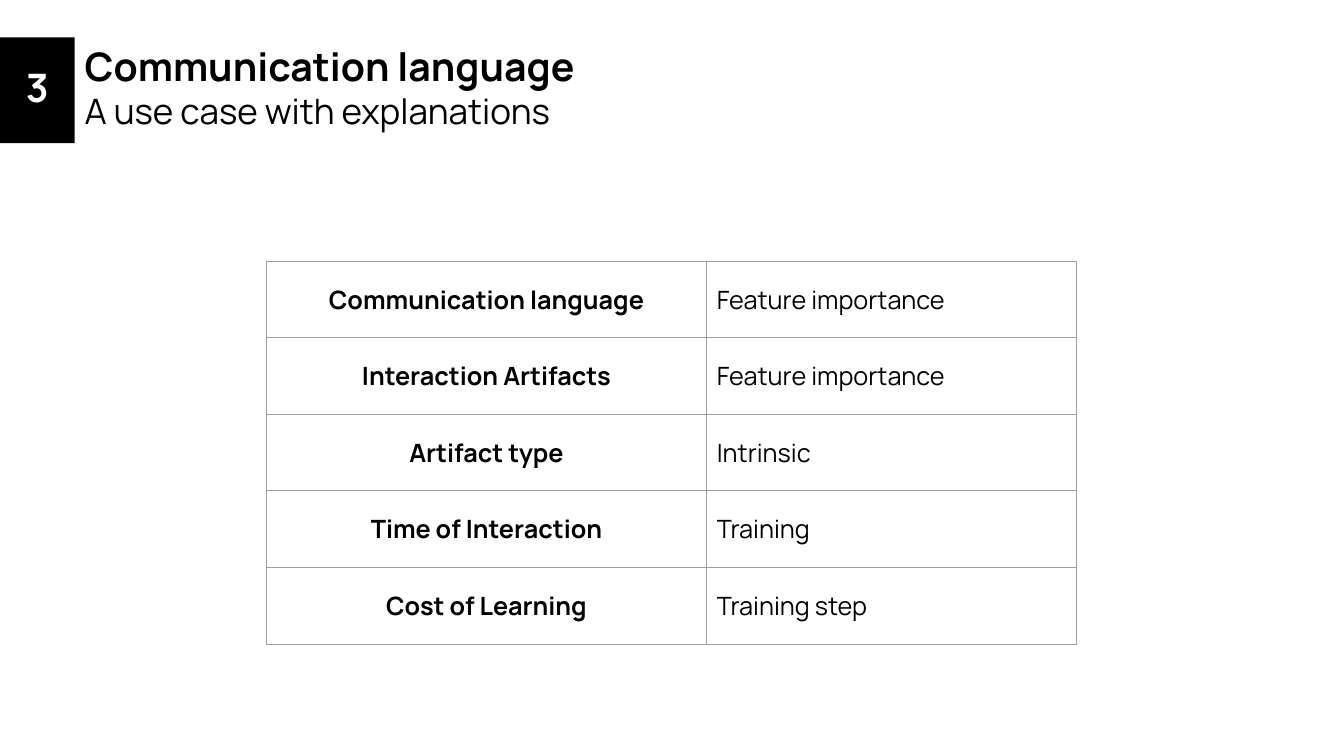
from dataclasses import dataclass

from lxml.etree import SubElement
from pptx import Presentation
from pptx.dml.color import RGBColor
from pptx.enum.shapes import MSO_SHAPE as Shape
from pptx.enum.text import MSO_ANCHOR as Anchor, MSO_AUTO_SIZE as AutoSize, PP_ALIGN as Align
from pptx.oxml.ns import qn
from pptx.util import Inches, Pt

# Content
SECTION_NUMBER = "3"
TITLE = "Communication language"
SUBTITLE = "A use case with explanations"
ROWS = [
    ("Communication language", "Feature importance"),
    ("Interaction Artifacts", "Feature importance"),
    ("Artifact type", "Intrinsic"),
    ("Time of Interaction", "Training"),
    ("Cost of Learning", "Training step"),
]

# Layout in inches
SLIDE_WIDTH, SLIDE_HEIGHT = 13.33, 7.5
HEADER_TOP, TITLE_WIDTH, TITLE_HEIGHT = 0.37, 11.55, 0.99
BADGE_WIDTH, BADGE_HEIGHT = 0.74, 1.05
TABLE_LEFT, TABLE_TOP = 2.64, 2.59
COLUMN_WIDTHS, ROW_HEIGHT = (4.37, 3.67), 0.76
CELL_MARGIN = 0.1


@dataclass(frozen=True)
class Theme:
    font: str = "Manrope"
    ink: str = "000000"
    paper: str = "FFFFFF"
    border: str = "9E9E9E"
    border_width: float = 0.75
    title_size: int = 28
    subtitle_size: int = 25
    table_size: int = 18


THEME = Theme()


def write(paragraph, text, *, size, color=THEME.ink, bold=False, align=Align.LEFT, spacing=None):
    paragraph.alignment = align
    if spacing:
        paragraph.line_spacing = spacing
    run = paragraph.add_run()
    run.text = text
    font = run.font
    font.name, font.size, font.bold = THEME.font, Pt(size), bold
    font.color.rgb = RGBColor.from_string(color)


def add_borders(cell):
    properties = cell._tc.get_or_add_tcPr()
    for side in ("lnL", "lnR", "lnT", "lnB"):
        line = SubElement(properties, qn(f"a:{side}"), w=str(Pt(THEME.border_width)))
        fill = SubElement(line, qn("a:solidFill"))
        SubElement(fill, qn("a:srgbClr"), val=THEME.border)


def add_header(slide):
    # Title and subtitle
    title = slide.shapes.title
    title.left, title.top = Inches(BADGE_WIDTH), Inches(HEADER_TOP)
    title.width, title.height = Inches(TITLE_WIDTH), Inches(TITLE_HEIGHT)
    frame = title.text_frame
    frame.auto_size = AutoSize.NONE
    frame.word_wrap = True
    frame.vertical_anchor = Anchor.TOP
    write(frame.paragraphs[0], TITLE, size=THEME.title_size, bold=True)
    write(frame.add_paragraph(), SUBTITLE, size=THEME.subtitle_size)

    # Section number
    badge = slide.shapes.add_shape(Shape.RECTANGLE, 0, Inches(HEADER_TOP),
                                   Inches(BADGE_WIDTH), Inches(BADGE_HEIGHT))
    badge.shadow.inherit = False
    badge.fill.solid()
    badge.fill.fore_color.rgb = RGBColor.from_string(THEME.ink)
    badge.line.fill.background()
    badge.text_frame.vertical_anchor = Anchor.MIDDLE
    write(badge.text_frame.paragraphs[0], SECTION_NUMBER, size=THEME.title_size,
          color=THEME.paper, bold=True, align=Align.CENTER, spacing=0.9)


def add_use_case_table(slide):
    table = slide.shapes.add_table(
        len(ROWS), len(COLUMN_WIDTHS), Inches(TABLE_LEFT), Inches(TABLE_TOP),
        Inches(sum(COLUMN_WIDTHS)), Inches(ROW_HEIGHT * len(ROWS))).table
    table.first_row = table.horz_banding = False
    for column, width in zip(table.columns, COLUMN_WIDTHS):
        column.width = Inches(width)

    for row, texts in zip(table.rows, ROWS):
        row.height = Inches(ROW_HEIGHT)
        for index, (cell, text) in enumerate(zip(row.cells, texts)):
            is_label = index == 0
            add_borders(cell)
            cell.fill.solid()
            cell.fill.fore_color.rgb = RGBColor.from_string(THEME.paper)
            cell.vertical_anchor = Anchor.MIDDLE
            cell.margin_left = cell.margin_right = Inches(CELL_MARGIN)
            cell.margin_top = cell.margin_bottom = Inches(CELL_MARGIN)
            write(cell.text_frame.paragraphs[0], text, size=THEME.table_size,
                  bold=is_label, align=Align.CENTER if is_label else Align.LEFT)


def main():
    presentation = Presentation()
    presentation.slide_width = Inches(SLIDE_WIDTH)
    presentation.slide_height = Inches(SLIDE_HEIGHT)
    title_only = presentation.slide_layouts.get_by_name("Title Only")
    slide = presentation.slides.add_slide(title_only)
    add_header(slide)
    add_use_case_table(slide)
    presentation.save("out.pptx")


if __name__ == "__main__":
    main()
